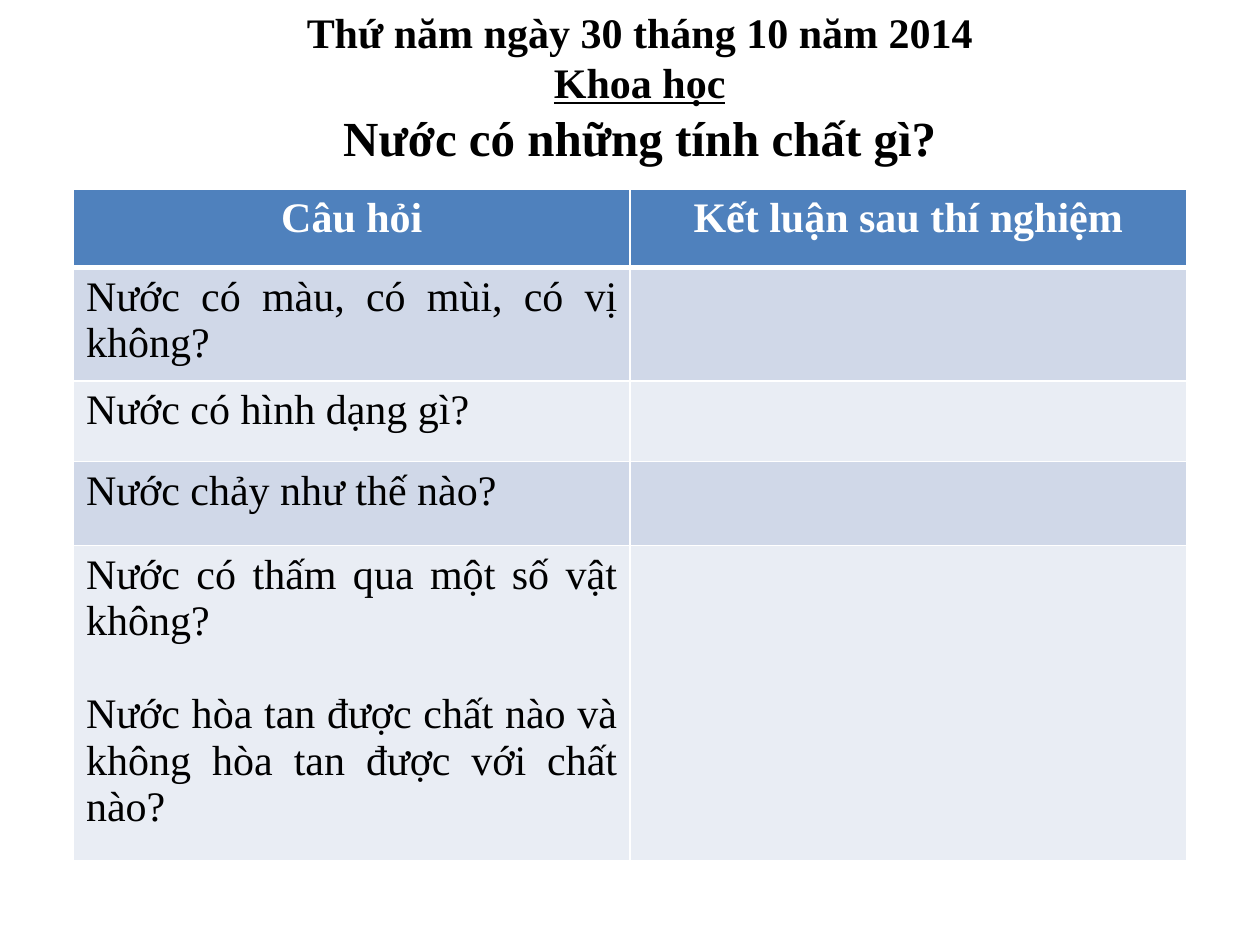
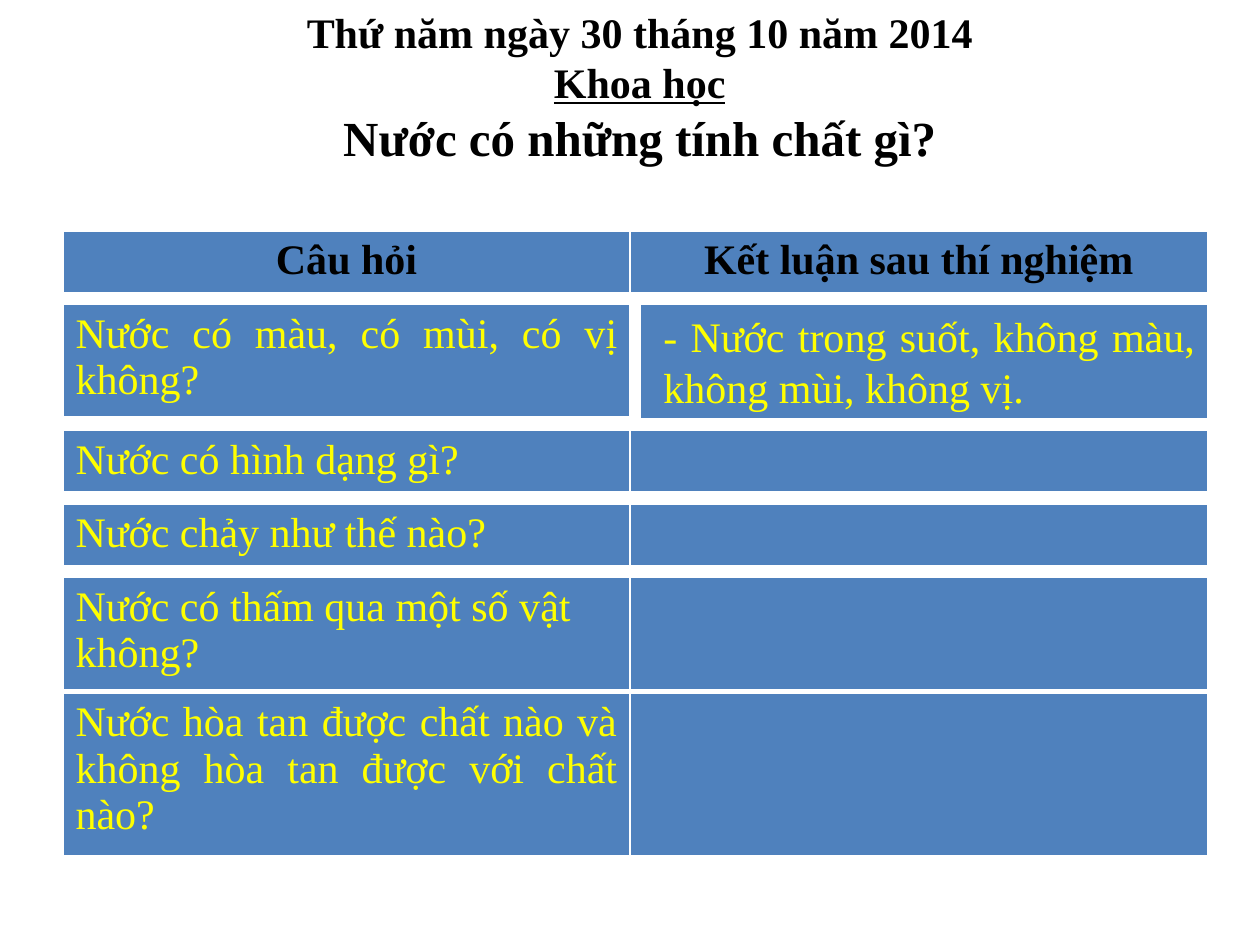
"""Build two science lesson slides about the properties of water."""
from lxml.etree import SubElement
from pptx import Presentation
from pptx.dml.color import RGBColor
from pptx.enum.text import MSO_AUTO_SIZE as AutoSize, PP_ALIGN as Align
from pptx.oxml.ns import qn
from pptx.util import Pt

COLOURS = {"black": "000000", "white": "FFFFFF", "yellow": "FFFF00",
           "blue": "4F81BD", "band": "D0D8E8", "pale": "E9EDF4"}
FONT = "Times New Roman"

TITLE = [("Thứ năm ngày 30 tháng 10 năm 2014", 24, False),
         ("Khoa học", 24, True),
         ("Nước có những tính chất gì?", 28, False)]
HEADERS = ["Câu hỏi", "Kết luận sau thí nghiệm"]
COLOUR_TASTE = "Nước có màu, có mùi, có vị không?"
FORM = "Nước có hình dạng gì?"
FLOW = "Nước chảy như thế nào?"
SOAK = "Nước có thấm qua một số vật không?"
DISSOLVE = "Nước hòa tan được chất nào và không hòa tan được với chất nào?"
ANSWER = "- Nước trong suốt, không màu, không mùi, không vị."

QUESTION_ROWS = [([COLOUR_TASTE], 64), ([FORM], 46), ([FLOW], 48), ([SOAK, DISSOLVE], 180)]
LEFT, COLUMNS = 36, (324, 330)
STRIPS = [
    (LEFT, 132, COLUMNS, 36, HEADERS, Align.CENTER),
    (LEFT, 246, COLUMNS, 36, [FORM, ""], Align.LEFT),
    (LEFT, 288, COLUMNS, 36, [FLOW, ""], Align.LEFT),
    (LEFT, 330, COLUMNS, 65, [SOAK, ""], Align.LEFT),
    (LEFT, 396, COLUMNS, 94, [DISSOLVE, ""], Align.JUSTIFY),
    (LEFT, 174, (324,), 65, [COLOUR_TASTE], Align.JUSTIFY),
    (366, 174, (324,), 66, [""], Align.LEFT),
]


def colour(name):
    return RGBColor.from_string(COLOURS[name])


def style(paragraph, align, ink, size=24, bold=False, underline=False):
    paragraph.alignment = align
    for run in paragraph.runs:
        font = run.font
        font.name, font.size, font.bold = FONT, Pt(size), bold
        font.underline = underline
        font.color.rgb = colour(ink)


def add_text_box(slide, left, top, width, height, lines):
    box = slide.shapes.add_textbox(Pt(left), Pt(top), Pt(width), Pt(height))
    frame = box.text_frame
    frame.word_wrap = True
    frame.auto_size = AutoSize.SHAPE_TO_FIT_TEXT
    frame.text = "\n".join(lines)
    return frame.paragraphs


def add_title(slide):
    paragraphs = add_text_box(slide, 24, 0, 683, 99, [line[0] for line in TITLE])
    for paragraph, (_, size, underline) in zip(paragraphs, TITLE):
        style(paragraph, Align.CENTER, "black", size, True, underline)


def add_table(slide, left, top, columns, rows):
    frame = slide.shapes.add_table(len(rows), len(columns), Pt(left), Pt(top),
                                   Pt(sum(columns)), Pt(sum(rows)))
    table = frame.table
    for column, width in zip(table.columns, columns):
        column.width = Pt(width)
    for row, height in zip(table.rows, rows):
        row.height = Pt(height)
    return table


def set_cell(cell, lines, fill, align, ink, bold=False, edges=()):
    cell.fill.solid()
    cell.fill.fore_color.rgb = colour(fill)
    cell.text = "\n".join(lines)
    for index, paragraph in enumerate(cell.text_frame.paragraphs):
        style(paragraph, align, ink, bold=bold)
        if index:
            paragraph.space_before = Pt(26.6)
    properties = cell._tc.get_or_add_tcPr()
    for index, (side, width) in enumerate(edges):
        line = SubElement(properties, qn(f"a:ln{side}"), w=str(Pt(width)))
        solid = SubElement(line, qn("a:solidFill"))
        SubElement(solid, qn("a:srgbClr"), val=COLOURS["white"])
        properties.insert(index, line)


def question_slide(slide):
    heights = [45] + [height for _, height in QUESTION_ROWS]
    table = add_table(slide, 42, 108, (318, 318), heights)
    sides = [("L", 1), ("R", 1)]
    for column, header in enumerate(HEADERS):
        set_cell(table.cell(0, column), [header], "blue", Align.CENTER, "white", True,
                 sides + [("T", 1), ("B", 3)])
    for row, (questions, _) in enumerate(QUESTION_ROWS, 1):
        fill = "band" if row % 2 else "pale"
        for column, lines in enumerate((questions, [])):
            set_cell(table.cell(row, column), lines, fill, Align.JUSTIFY, "black",
                     edges=sides + [("B", 1)])


def answer_slide(slide):
    edges = [("L", 1), ("R", 1), ("T", 1), ("B", 3)]
    for left, top, columns, height, texts, align in STRIPS:
        table = add_table(slide, left, top, columns, [height])
        is_header = texts is HEADERS
        for column, text in enumerate(texts):
            set_cell(table.cell(0, column), [text], "blue", align,
                     "black" if is_header else "yellow", is_header, edges)
    answer, = add_text_box(slide, 372, 174, 318, 66, [ANSWER])
    style(answer, Align.JUSTIFY, "yellow")


def main():
    presentation = Presentation()
    presentation.slide_width, presentation.slide_height = Pt(720), Pt(540)
    for fill_slide in (question_slide, answer_slide):
        slide = presentation.slides.add_slide(presentation.slide_layouts[6])
        add_title(slide)
        fill_slide(slide)
    presentation.save("out.pptx")


if __name__ == "__main__":
    main()
